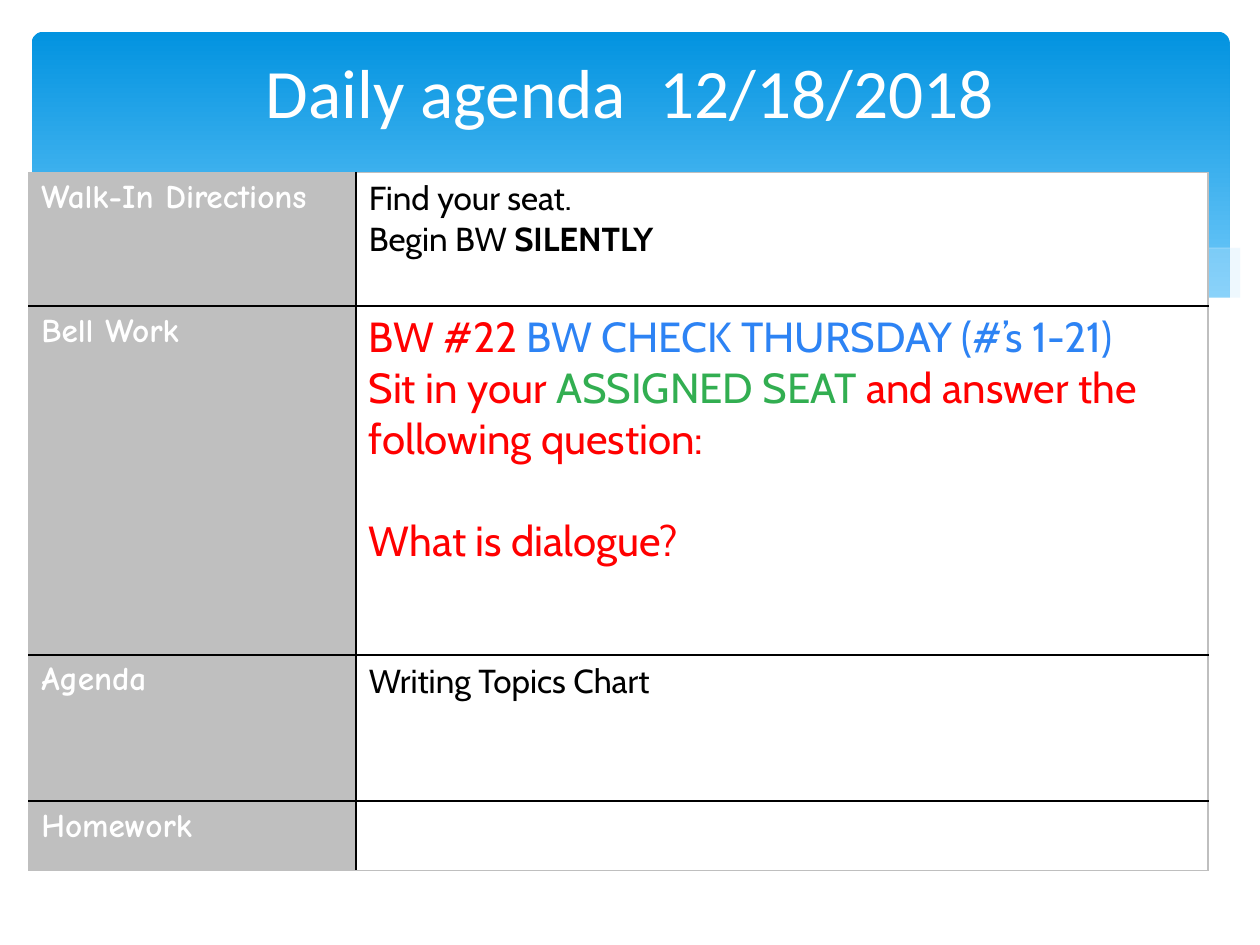
from lxml import etree
from pptx import Presentation
from pptx.dml.color import RGBColor
from pptx.enum.shapes import MSO_SHAPE
from pptx.enum.text import MSO_ANCHOR, MSO_AUTO_SIZE, PP_ALIGN
from pptx.oxml.ns import qn
from pptx.util import Cm, Pt

ROUNDED = MSO_SHAPE.ROUNDED_RECTANGLE
TOP = MSO_ANCHOR.TOP
NO_AUTOFIT = MSO_AUTO_SIZE.NONE
CENTER = PP_ALIGN.CENTER

WHITE = RGBColor(0xFF, 0xFF, 0xFF)
BLACK = RGBColor(0, 0, 0)
GRAY = RGBColor(0xBF, 0xBF, 0xBF)
SKY = RGBColor(0x02, 0x93, 0xE0)
PALE_SKY = RGBColor(0x83, 0xD3, 0xFE)
MIST = RGBColor(0xC6, 0xE7, 0xFC)
RED = RGBColor(0xFF, 0, 0)
BLUE = RGBColor(0x2D, 0x83, 0xF4)
GREEN = RGBColor(0x32, 0xAE, 0x51)

LABEL = {"name": "Comic Neue", "size": Pt(19), "bold": True, "color": WHITE}
BODY = {"name": "Cabin", "size": Pt(19), "bold": False, "color": BLACK}
STRONG = {**BODY, "bold": True}
TASK = {**BODY, "size": Pt(24), "color": RED}
NOTICE = {**TASK, "color": BLUE}
SEAT = {**TASK, "color": GREEN}
TITLE = {"name": "Calibri", "size": Pt(39.6), "bold": False, "color": WHITE}

# Each agenda row: label, height in cm, paragraphs made of (text, format) runs
AGENDA = [
    ("Walk-In Directions", 2.69, [
        [("Find your seat.", BODY)],
        [("Begin BW ", BODY), ("SILENTLY", STRONG)]]),
    ("Bell Work", 7.03, [
        [("BW #22 ", TASK), ("BW CHECK THURSDAY (#’s 1-21)", NOTICE)],
        [("Sit in your ", TASK), ("ASSIGNED SEAT ", SEAT),
         ("and answer the following question:", TASK)],
        [("What is dialogue?", TASK)]]),
    ("Agenda", 2.95, [[("Writing Topics Chart", BODY)]]),
    ("Homework", 1.4, []),
]
QUESTION_ROW, QUESTION_GAP = 1, Pt(29)

# Wave outlines in cm from the top left corner of the band
MIST_WAVE = [
    (24.15, 4.44), (23.44, 4.54), (22.37, 4.77), (21.23, 5.02), (19.15, 5.51),
    (17.88, 5.79), (16.15, 6.09), (16.91, 6.19), (17.95, 6.32), (19.76, 6.42),
    (21.05, 6.37), (22.35, 6.19), (23.29, 5.94), (24.15, 5.63)]
CREST_LINE = [
    (14.93, 5.89), (17.01, 5.33), (18.36, 5.02), (19.83, 4.69), (21.36, 4.41),
    (22.47, 4.24), (23.52, 4.11), (24.13, 4.06)]
WHITE_WAVE = [
    (24.18, 5.61), (23.49, 5.86), (22.47, 6.14), (21.28, 6.32), (19.91, 6.4),
    (18.26, 6.32), (16.33, 6.09), (14.07, 5.71), (11.43, 5.13), (8.63, 4.49),
    (6.78, 4.19), (5.2, 4.06), (3.86, 4.03), (2.38, 4.11), (1.29, 4.31),
    (0.53, 4.52), (-0.06, 4.77), (-0.06, 7.72), (24.18, 7.72)]


def add_run(paragraph, text, style):
    run = paragraph.add_run()
    run.text = text
    for key, value in style.items():
        if key == "color":
            run.font.color.rgb = value
        else:
            setattr(run.font, key, value)


def add_wave(shapes, left, top, points, closed=True):
    scale = Cm(1)
    corners = [(left / scale + x, top / scale + y) for x, y in points]
    builder = shapes.build_freeform(*corners[0], scale=scale)
    builder.add_line_segments(corners[1:], close=closed)
    wave = builder.convert_to_shape()
    wave.shadow.inherit = False
    wave.line.fill.background()
    return wave


def add_band(shapes, left, top, width, height):
    # Gradient panel
    panel = shapes.add_shape(ROUNDED, left, top, width, height)
    panel.adjustments[0] = 0.034
    panel.shadow.inherit = False
    panel.line.fill.background()
    panel.fill.gradient()
    panel.fill.gradient_angle = 270
    stops = panel.fill.gradient_stops
    for stop, position, color in zip(stops, (0, 0.9), (SKY, PALE_SKY)):
        stop.position = position
        stop.color.rgb = color

    # Translucent wave
    mist = add_wave(shapes, left, top, MIST_WAVE)
    mist.fill.solid()
    mist.fill.fore_color.rgb = MIST
    tint = mist.fill._xPr.find(".//" + qn("a:srgbClr"))
    etree.SubElement(tint, qn("a:alpha"), val="29000")

    # Thin crest
    crest = add_wave(shapes, left, top, CREST_LINE, closed=False)
    crest.fill.background()
    crest.line.color.rgb = WHITE
    crest.line.width = Pt(0.25)

    # White wave that cuts off the lower edge
    cutoff = add_wave(shapes, left, top, WHITE_WAVE)
    cutoff.fill.solid()
    cutoff.fill.fore_color.rgb = WHITE


def place_title(slide, left, top, width, height):
    title = slide.shapes.title
    box = {"left": left, "top": top, "width": width, "height": height}
    for key, value in box.items():
        setattr(title, key, value)
    frame = title.text_frame
    layout = {"vertical_anchor": TOP, "auto_size": NO_AUTOFIT,
              "word_wrap": True, "margin_top": Cm(0.05)}
    for key, value in layout.items():
        setattr(frame, key, value)
    heading = frame.paragraphs[0]
    heading.alignment = CENTER
    add_run(heading, "Daily agenda\t 12/18/2018", TITLE)
    # Bring the title in front of the band
    slide.shapes._spTree.append(title._element)


def set_borders(cell, colors):
    properties = cell._tc.get_or_add_tcPr()
    for index, (side, color) in enumerate(colors.items()):
        line = etree.Element(qn("a:ln" + side), w=str(Pt(1)))
        solid = etree.SubElement(line, qn("a:solidFill"))
        etree.SubElement(solid, qn("a:srgbClr"), val=str(color))
        properties.insert(index, line)


def add_agenda(shapes, left, top, width, label_width):
    height = Cm(sum(row_height for _, row_height, _ in AGENDA))
    table = shapes.add_table(len(AGENDA), 2, left, top, width, height).table
    table.first_row = table.horz_banding = False
    table.columns[0].width = label_width
    table.columns[1].width = width - label_width

    for index, (label, row_height, paragraphs) in enumerate(AGENDA):
        table.rows[index].height = Cm(row_height)
        contents = [[[(label, LABEL)]], paragraphs]
        for column, (content, fill) in enumerate(zip(contents, (GRAY, WHITE))):
            cell = table.cell(index, column)
            cell.fill.solid()
            cell.fill.fore_color.rgb = fill
            set_borders(cell, {
                "L": BLACK if column else GRAY,
                "R": GRAY if column else BLACK,
                "T": BLACK if index else GRAY,
                "B": BLACK if index < len(AGENDA) - 1 else GRAY})
            frame = cell.text_frame
            for number, runs in enumerate(content):
                paragraph = frame.add_paragraph() if number else frame.paragraphs[0]
                for text, style in runs:
                    add_run(paragraph, text, style)

    question = table.cell(QUESTION_ROW, 1).text_frame.paragraphs[-1]
    question.space_before = QUESTION_GAP


def main():
    deck = Presentation()
    deck.slide_width, deck.slide_height = Cm(25.4), Cm(19.05)
    slide = deck.slides.add_slide(deck.slide_layouts[5])
    add_band(slide.shapes, Cm(0.64), Cm(0.64), Cm(24.15), Cm(6.86))
    place_title(slide, Cm(1.27), Cm(0.94), Cm(22.86), Cm(3.48))
    add_agenda(slide.shapes, Cm(0.58), Cm(3.48), Cm(23.77), Cm(6.6))
    deck.save("out.pptx")


if __name__ == "__main__":
    main()
